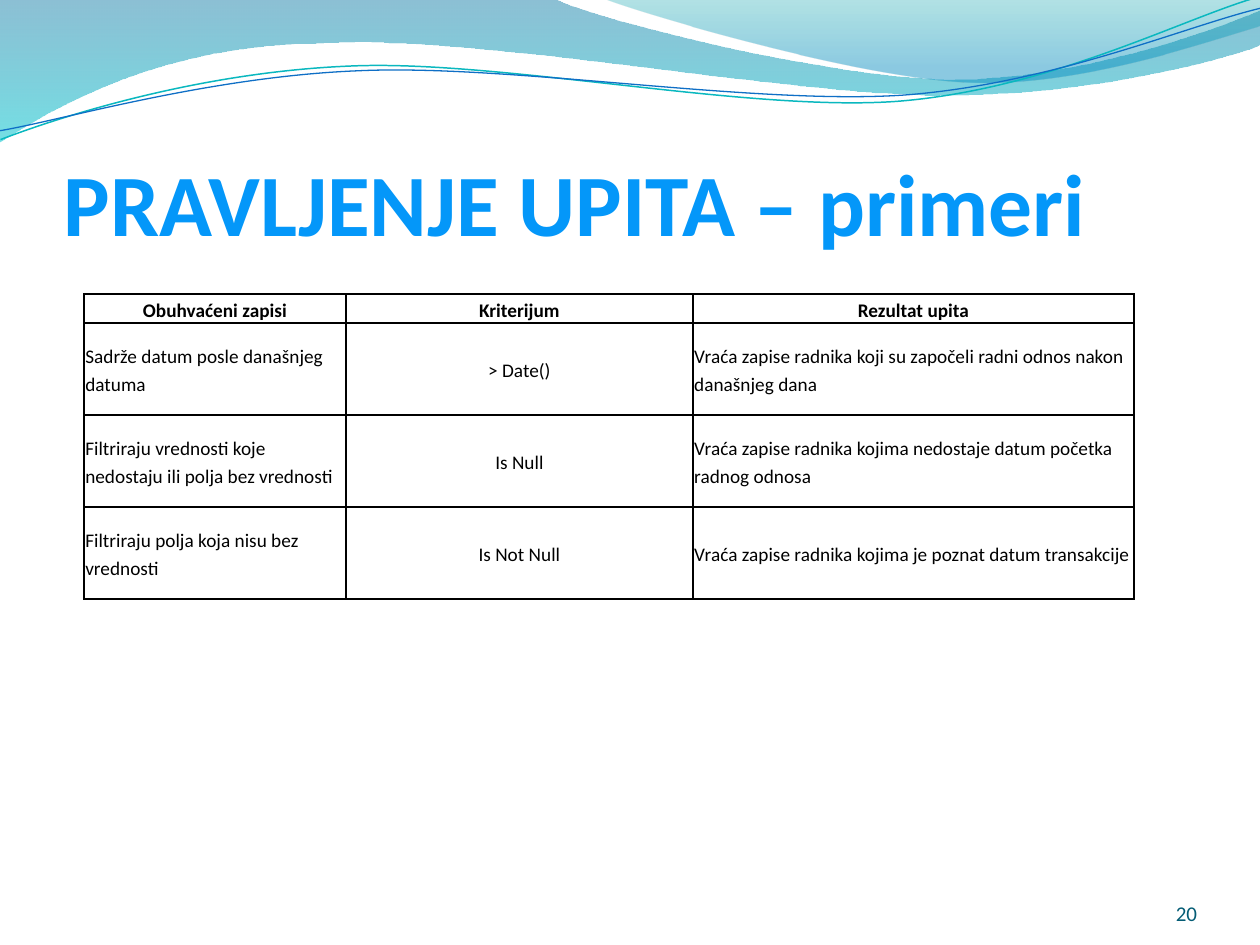
from dataclasses import dataclass
from typing import Optional

from lxml import etree
from pptx import Presentation
from pptx import util as u
from pptx.dml.color import RGBColor
from pptx.enum import text
from pptx.oxml import ns

PX = 914400 / 126
FONT = "Calibri"
BLACK = RGBColor(0x00, 0x00, 0x00)
NUMBER_TEAL = RGBColor(0x04, 0x5C, 0x75)
LINE_TEAL = RGBColor(0x0A, 0xB8, 0xBF)
LINE_BLUE = RGBColor(0x0F, 0x6F, 0xC6)
DEEP_BLUE = RGBColor(0x00, 0x74, 0xA1)
CYAN = RGBColor(0x00, 0xC6, 0xCF)
SEA_GREEN = RGBColor(0x00, 0xA1, 0xA9)
MID_BLUE = RGBColor(0x00, 0x8B, 0xBF)
SKY = RGBColor(0x7D, 0xC4, 0xFF)
AZURE = RGBColor(0x04, 0x97, 0xF9)


@dataclass(frozen=True)
class Stop:
    position: int
    color: RGBColor
    opacity: int = 100


@dataclass(frozen=True)
class Wave:
    """Steps hold one point for a straight side, three for a Bezier curve."""
    start: tuple[int, int]
    steps: tuple[tuple[int, ...], ...]
    stops: tuple[Stop, ...] = ()
    line: Optional[RGBColor] = None
    weight: float = 0
    rotation: float = 0


@dataclass(frozen=True)
class Label:
    words: str
    box: tuple[int, int, int, int]
    size: int
    align: text.PP_ALIGN
    top_inset: int = 0
    bold: bool = False
    color: RGBColor = BLACK


WAVES = (
    Wave((0, -1), ((554, -1), (600, 21, 837, 79, 955, 79),
                   (1075, 79, 1207, 33, 1260, 11), (1261, 45),
                   (1239, 55, 1096, 96, 940, 95), (784, 95, 481, 35, 324, 43),
                   (163, 44, 58, 105, -1, 142), (0, -1)),
         stops=(Stop(0, DEEP_BLUE, 45), Stop(100, CYAN, 55))),
    Wave((604, -1), ((641, 14, 859, 78, 969, 82),
                     (1079, 87, 1211, 40, 1260, 26), (1260, 0), (604, -1)),
         stops=(Stop(0, SEA_GREEN, 30), Stop(80, MID_BLUE, 45))),
    Wave((-2, 110), ((58, 90, 199, 52, 350, 53), (499, 53, 745, 118, 896, 114),
                     (1049, 109, 1184, 45, 1260, 27)),
         line=LINE_TEAL, weight=0.85, rotation=357.3),
    Wave((-2, 101), ((58, 94, 208, 57, 358, 58), (509, 58, 751, 111, 902, 108),
                     (1052, 104, 1188, 52, 1263, 38)),
         line=LINE_BLUE, weight=0.75, rotation=357.3),
)
TITLE = Label("PRAVLJENJE UPITA – primeri", (64, 97, 1134, 157), 50,
              text.PP_ALIGN.LEFT, top_inset=6, bold=True, color=AZURE)
TITLE_STOPS = (Stop(0, SKY), Stop(75, AZURE), Stop(100, DEEP_BLUE))
PAGE_NUMBER = Label("20", (1092, 876, 105, 50), 12, text.PP_ALIGN.RIGHT,
                    color=NUMBER_TEAL)

TABLE_LEFT, TABLE_TOP = 84, 294
COLUMNS = (262, 347, 441)
HEADER_HEIGHT, ROW_HEIGHT = 24, 92
CELL_INSET = u.Pt(0.75)
ROWS = (
    ("Obuhvaćeni zapisi", "Kriterijum", "Rezultat upita"),
    ("Sadrže datum posle današnjeg datuma", "> Date()",
     "Vraća zapise radnika koji su započeli radni odnos nakon današnjeg dana"),
    ("Filtriraju vrednosti koje nedostaju ili polja bez vrednosti", "Is Null",
     "Vraća zapise radnika kojima nedostaje datum početka radnog odnosa"),
    ("Filtriraju polja koja nisu bez vrednosti", "Is Not Null",
     "Vraća zapise radnika kojima je poznat datum transakcije"),
)


def px(length: float) -> u.Emu:
    return u.Emu(round(length * PX))


def add_child(parent, tag: str, **attributes):
    return etree.SubElement(parent, ns.qn(tag),
                            {key: str(value) for key, value in attributes.items()})


def vertical_gradient(stops: tuple[Stop, ...]):
    gradient = etree.Element(ns.qn("a:gradFill"), rotWithShape="1")
    stop_list = add_child(gradient, "a:gsLst")
    for stop in stops:
        mark = add_child(stop_list, "a:gs", pos=stop.position * 1000)
        color = add_child(mark, "a:srgbClr", val=stop.color)
        if stop.opacity < 100:
            add_child(color, "a:alpha", val=stop.opacity * 1000)
    add_child(gradient, "a:lin", ang=5400000, scaled=0)
    return gradient


def bend_sides(shape, wave: Wave) -> None:
    """Turn the straight sides of a freeform into the wave's Bezier curves."""
    sides = list(shape._element.iter(ns.qn("a:lnTo")))
    for side, step in zip(sides, wave.steps):
        if len(step) == 6:
            curve = etree.Element(ns.qn("a:cubicBezTo"))
            for x, y in zip(step[::2], step[1::2]):
                add_child(curve, "a:pt", x=px(x) - shape.left, y=px(y) - shape.top)
            side.getparent().replace(side, curve)


def draw_wave(page, wave: Wave) -> None:
    builder = page.shapes.build_freeform(*map(px, wave.start))
    corners = [(px(step[-2]), px(step[-1])) for step in wave.steps]
    builder.add_line_segments(corners, close=bool(wave.stops))
    shape = builder.convert_to_shape()
    bend_sides(shape, wave)
    shape.rotation = wave.rotation
    shape.shadow.inherit = False
    shape.fill.background()
    if wave.stops:
        properties = shape.fill._xPr
        properties.replace(properties.find(ns.qn("a:noFill")),
                           vertical_gradient(wave.stops))
        shape.line.fill.background()
    else:
        shape.line.color.rgb = wave.line
        shape.line.width = u.Pt(wave.weight)


def style_span(span, size: int, color: RGBColor, bold: bool) -> None:
    span.font.name = FONT
    span.font.size = u.Pt(size)
    span.font.bold = bold
    span.font.color.rgb = color


def draw_label(page, label: Label):
    """Draw one line of text and return its run."""
    box = page.shapes.add_textbox(*map(px, label.box))
    frame = box.text_frame
    frame.word_wrap = True
    frame.vertical_anchor = text.MSO_ANCHOR.BOTTOM
    frame.margin_left = frame.margin_right = frame.margin_bottom = 0
    frame.margin_top = px(label.top_inset)
    frame.text = label.words
    para = frame.paragraphs[0]
    para.alignment = label.align
    style_span(para.runs[0], label.size, label.color, label.bold)
    return para.runs[0]


def fill_cell(cell, words: str, header: bool, centred: bool) -> None:
    cell.text_frame.text = words
    cell.vertical_anchor = text.MSO_ANCHOR.MIDDLE
    cell.margin_left = cell.margin_right = CELL_INSET
    cell.margin_top = cell.margin_bottom = CELL_INSET
    para = cell.text_frame.paragraphs[0]
    para.alignment = text.PP_ALIGN.CENTER if centred else text.PP_ALIGN.LEFT
    para.line_spacing = 1.15
    para.space_after = u.Pt(10)
    style_span(para.runs[0], 11, BLACK, header)
    properties = cell._tc.get_or_add_tcPr()
    for side in "LRTB":
        border = add_child(properties, f"a:ln{side}", w=u.Pt(1))
        add_child(add_child(border, "a:solidFill"), "a:srgbClr", val=BLACK)
    cell.fill.background()


def draw_table(page) -> None:
    heights = [HEADER_HEIGHT] + [ROW_HEIGHT] * (len(ROWS) - 1)
    frame = page.shapes.add_table(len(ROWS), len(COLUMNS), px(TABLE_LEFT), px(TABLE_TOP),
                                  px(sum(COLUMNS)), px(sum(heights)))
    table = frame.table
    table.first_row = table.horz_banding = False
    for column, width in zip(table.columns, COLUMNS):
        column.width = px(width)
    for i, (row, height) in enumerate(zip(table.rows, heights)):
        row.height = px(height)
        for j, words in enumerate(ROWS[i]):
            fill_cell(row.cells[j], words, header=i == 0, centred=i == 0 or j == 1)


def main() -> None:
    deck = Presentation()
    deck.slide_width, deck.slide_height = px(1260), px(945)
    page = deck.slides.add_slide(deck.slide_layouts[6])
    for wave in WAVES:
        draw_wave(page, wave)
    title_span = draw_label(page, TITLE)
    span_properties = title_span.font._element
    span_properties.replace(span_properties.find(ns.qn("a:solidFill")),
                            vertical_gradient(TITLE_STOPS))
    draw_label(page, PAGE_NUMBER)
    draw_table(page)
    deck.save("out.pptx")


if __name__ == "__main__":
    main()
